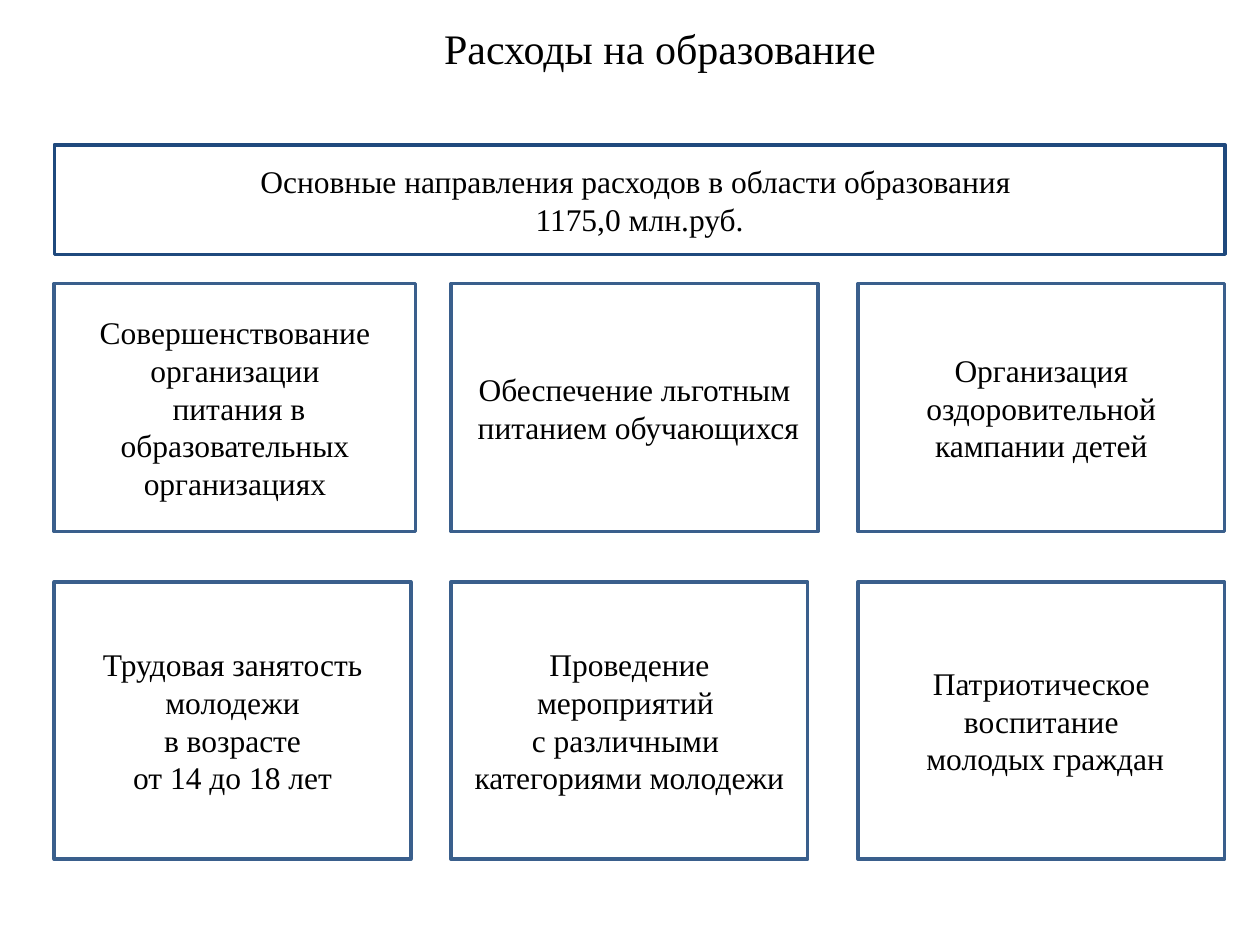
from pptx import Presentation
from pptx.dml.color import RGBColor
from pptx.enum import shapes, text
from pptx.util import Pt

FONT = "Times New Roman"
COLORS = {"text": "000000", "head": "1F497D", "card": "3A5F8C"}
LEFTS = (31, 257.8, 490.3)
# Each row: top, height, then (width, lines) for every card
ROWS = (
    (162, 141.8, (
        (206.6, ("Совершенствование организации",
                 " питания в образовательных", "организациях")),
        (209.5, ("Обеспечение льготным", " питанием обучающихся")),
        (209.5, ("Организация", "оздоровительной кампании детей")),
    )),
    (332.6, 158.4, (
        (203.8, ("Трудовая занятость молодежи", " в возрасте ",
                 "от 14 до 18 лет")),
        (203.8, ("Проведение мероприятий ", "с различными ",
                 "категориями молодежи")),
        (209.5, ("Патриотическое воспитание", " молодых граждан")),
    )),
)


def color(name):
    return RGBColor.from_string(COLORS[name])


def write(frame, lines, size):
    """Fill a text frame with centred lines, one paragraph each."""
    frame.word_wrap = True
    for i, line in enumerate(lines):
        para = frame.add_paragraph() if i else frame.paragraphs[0]
        para.alignment = text.PP_ALIGN.CENTER
        run = para.add_run()
        run.text = line
        run.font.name = FONT
        run.font.size = Pt(size)
        run.font.color.rgb = color("text")


def add_title(slide, line):
    box = slide.shapes.add_textbox(Pt(144.7), Pt(9.4), Pt(465), Pt(36))
    write(box.text_frame, [line], 24)
    box.text_frame.auto_size = text.MSO_AUTO_SIZE.SHAPE_TO_FIT_TEXT


def add_card(slide, left, top, width, height, lines, edge="card"):
    card = slide.shapes.add_shape(
        shapes.MSO_SHAPE.RECTANGLE, Pt(left), Pt(top), Pt(width), Pt(height))
    card.shadow.inherit = False
    card.fill.background()
    card.line.color.rgb = color(edge)
    card.line.width = Pt(2)
    card.text_frame.vertical_anchor = text.MSO_ANCHOR.MIDDLE
    write(card.text_frame, lines, 18)


def main():
    deck = Presentation()
    deck.slide_width, deck.slide_height = Pt(720), Pt(540)
    slide = deck.slides.add_slide(deck.slide_layouts[6])
    add_card(slide, LEFTS[0], 82.8, 669, 62.6,
             ("Основные направления расходов в области образования ",
              "1175,0 млн.руб."), "head")
    add_title(slide, "Расходы на образование")
    for top, height, cards in ROWS:
        for left, (width, lines) in zip(LEFTS, cards):
            add_card(slide, left, top, width, height, lines)
    deck.save("out.pptx")


if __name__ == "__main__":
    main()
